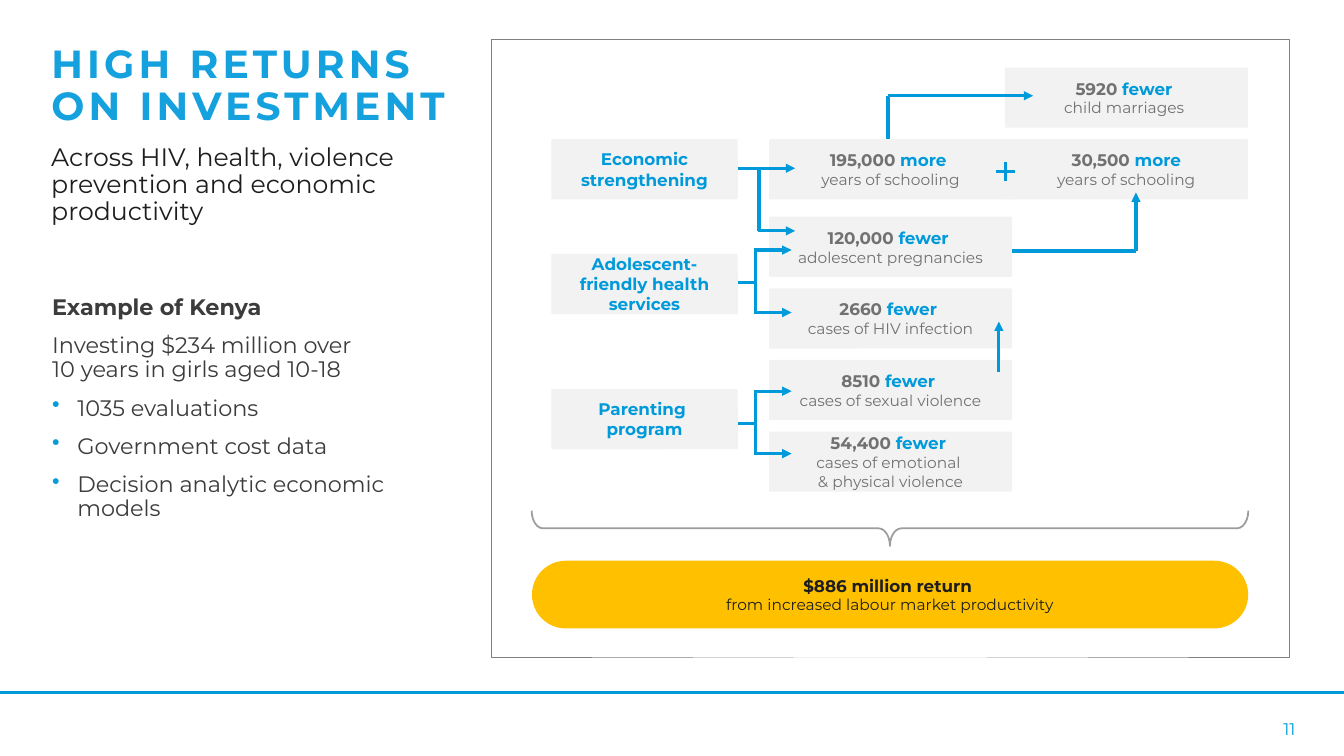
"""Build the slide on the returns of investing in girls in Kenya."""
from dataclasses import dataclass

from lxml.etree import SubElement
from pptx import Presentation
from pptx.dml.color import RGBColor
from pptx.enum.shapes import MSO_CONNECTOR as Connector, MSO_SHAPE as Preset
from pptx.enum.text import MSO_ANCHOR as Anchor, MSO_AUTO_SIZE as AutoSize, PP_ALIGN as Align
from pptx.oxml.ns import qn
from pptx.util import Pt

FONT = "Montserrat"
COLOURS = {
    "accent": "009ADA", "title": "14A1DD", "bullet": "059CD9", "ink": "1E1E1E",
    "body": "3C3C3C", "muted": "717171", "panel": "F2F2F2", "gold": "FFC000",
    "frame": "808080", "brace": "9D9D9D",
}
OUTCOME_LEFT, OUTCOME_RIGHT_LEFT, OUTCOME_WIDTH = 549.4, 717.8, 173.5
DRIVER_LEFT, DRIVER_WIDTH, BOX_HEIGHT = 393.8, 133.2, 43
ROW_TOP, PREGNANCY_TOP, ROW_PITCH = 99.4, 154.8, 51.15


@dataclass(frozen=True)
class Outcome:
    """A measured result with its figure, direction and caption."""
    left: float
    top: float
    figure: str
    change: str
    caption: str


@dataclass(frozen=True)
class Driver:
    """An intervention with the arrows that fan out to its outcomes."""
    label: str
    top: float
    stem_y: float
    trunk_x: float
    tip_x: float
    arrow_ys: tuple[float, float]


@dataclass(frozen=True)
class Route:
    """A chain of straight segments, with an optional head on the last."""
    points: tuple[tuple[float, float], ...]
    head: bool = True


OUTCOMES = [
    Outcome(OUTCOME_RIGHT_LEFT, ROW_TOP - ROW_PITCH, "5920 ", "fewer ", "child marriages "),
    Outcome(OUTCOME_LEFT, ROW_TOP, "195,000", " more ", "years of schooling"),
    Outcome(OUTCOME_RIGHT_LEFT, ROW_TOP, "30,500", " more", "years of schooling"),
] + [
    Outcome(OUTCOME_LEFT, PREGNANCY_TOP + row * ROW_PITCH, figure, "fewer ", caption)
    for row, (figure, caption) in enumerate([
        ("120,000 ", "adolescent pregnancies"),
        ("2660 ", "cases of HIV infection"),
        ("8510 ", "cases of sexual violence"),
        ("54,400 ", "cases of emotional \n& physical violence"),
    ])
]
DRIVERS = [
    Driver("Economic strengthening", ROW_TOP, 120.2, 542.2, 568, (120.2, 164.9)),
    Driver("Adolescent-friendly health services", 181.4, 201.6, 539.7, 565.4, (178.6, 223.2)),
    Driver("Parenting \nprogram", 277.9, 302.4, 539.7, 565.4, (279.4, 324)),
]
ROUTES = [
    Route(((634.3, ROW_TOP), (634.3, 68.4), (738, 68.4))),
    Route(((722.9, 179.3), (811.4, 179.3), (811.4, 137.5))),
    Route(((713.5, 265.7), (713.5, 229.7))),
    Route(((711.2, 122.6), (725.2, 122.6)), head=False),
    Route(((718.2, 115.6), (718.2, 129.6)), head=False),
]


def rgb(name: str) -> RGBColor:
    """Return the named colour."""
    return RGBColor.from_string(COLOURS[name])


def write(frame, text: str, *, size: float, colour: str, bold: bool = False,
          align=Align.LEFT, before: float = 0, spacing: float = 1, tracking: float = 0,
          bullet: bool = False, same_line: bool = False) -> None:
    """Write text as a new paragraph, or add it to the last one."""
    paragraph = frame.paragraphs[-1]
    if paragraph.runs and not same_line:
        paragraph = frame.add_paragraph()
    if bullet:
        properties = paragraph._p.get_or_add_pPr()
        properties.set("marL", str(Pt(18)))
        properties.set("indent", str(-Pt(18)))
        tint = SubElement(properties, qn("a:buClr"))
        SubElement(tint, qn("a:srgbClr")).set("val", COLOURS["bullet"])
        SubElement(properties, qn("a:buChar")).set("char", "•")
    paragraph.alignment = align
    paragraph.space_before = Pt(before)
    paragraph.line_spacing = spacing
    for index, line in enumerate(text.split("\n")):
        if index:
            paragraph.add_line_break()
        run = paragraph.add_run()
        run.text = line
        run.font.name, run.font.size, run.font.bold = FONT, Pt(size), bold
        run.font.color.rgb = rgb(colour)
        if tracking:
            run._r.get_or_add_rPr().set("spc", str(int(tracking * 100)))


def add_text_area(slide, left: float, top: float, width: float, height: float):
    """Add a wrapping text box and return its text frame."""
    frame = slide.shapes.add_textbox(Pt(left), Pt(top), Pt(width), Pt(height)).text_frame
    frame.word_wrap = True
    return frame


def add_panel(slide, preset, left: float, top: float, width: float, height: float, *,
              fill: str = "", line: str = "", weight: float = 0, adjust: tuple = ()):
    """Add a flat preset shape and return it."""
    panel = slide.shapes.add_shape(preset, Pt(left), Pt(top), Pt(width), Pt(height))
    panel.shadow.inherit = False
    for index, value in enumerate(adjust):
        panel.adjustments[index] = value
    if fill:
        panel.fill.solid()
        panel.fill.fore_color.rgb = rgb(fill)
    else:
        panel.fill.background()
    if line:
        panel.line.color.rgb = rgb(line)
        panel.line.width = Pt(weight)
    else:
        panel.line.fill.background()
    panel.text_frame.word_wrap = True
    panel.text_frame.vertical_anchor = Anchor.MIDDLE
    return panel


def add_route(slide, route: Route, weight: float = 2.25) -> None:
    """Draw each segment of a route."""
    for start, end in zip(route.points, route.points[1:]):
        segment = slide.shapes.add_connector(Connector.STRAIGHT, *map(Pt, start + end))
        segment.line.color.rgb = rgb("accent")
        segment.line.width = Pt(weight)
        if route.head and end == route.points[-1]:
            SubElement(segment.line._get_or_add_ln(), qn("a:tailEnd")).set("type", "triangle")
        SubElement(segment._element.spPr, qn("a:effectLst"))


def add_outcome(slide, outcome: Outcome) -> None:
    """Draw an outcome box."""
    frame = add_panel(slide, Preset.ROUNDED_RECTANGLE, outcome.left, outcome.top, OUTCOME_WIDTH,
                      BOX_HEIGHT, fill="panel", adjust=(0.02,)).text_frame
    write(frame, outcome.figure, size=12, colour="muted", bold=True, align=Align.CENTER)
    write(frame, outcome.change, size=12, colour="accent", bold=True, align=Align.CENTER,
          same_line=True)
    write(frame, outcome.caption, size=11, colour="muted", align=Align.CENTER)


def add_driver(slide, driver: Driver) -> None:
    """Draw an intervention box and its branching arrows."""
    box = add_panel(slide, Preset.ROUNDED_RECTANGLE, DRIVER_LEFT, driver.top, DRIVER_WIDTH,
                    BOX_HEIGHT, fill="panel", adjust=(0.02,))
    write(box.text_frame, driver.label, size=12, colour="accent", bold=True, align=Align.CENTER)
    trunk = driver.trunk_x
    stem = ((DRIVER_LEFT + DRIVER_WIDTH, driver.stem_y), (trunk, driver.stem_y))
    add_route(slide, Route(stem, head=False))
    add_route(slide, Route(tuple((trunk, y) for y in driver.arrow_ys), head=False))
    for y in driver.arrow_ys:
        add_route(slide, Route(((trunk - 1, y), (driver.tip_x, y))))


def add_story(slide) -> None:
    """Write the heading and the text on the left."""
    heading = slide.shapes.title
    heading.left, heading.top, heading.width, heading.height = map(Pt, (29.5, 28.1, 311, 70))
    frame = heading.text_frame
    frame.word_wrap, frame.auto_size, frame.vertical_anchor = True, AutoSize.NONE, Anchor.TOP
    write(frame, "HIGH RETURNS ON INVESTMENT", size=28, colour="title", bold=True,
          spacing=0.9, tracking=3)
    write(add_text_area(slide, 29.5, 99.5, 311, 68),
          "Across HIV, health, violence prevention and economic productivity",
          size=18, colour="ink", spacing=0.9)
    example = add_text_area(slide, 30.2, 208.1, 291.6, 170)
    write(example, "Example of Kenya", size=16, colour="body", bold=True, spacing=0.9)
    write(example, "Investing $234 million over \n10 years in girls aged 10-18",
          size=16, colour="body", before=10, spacing=0.9)
    for basis in ("1035 evaluations", "Government cost data", "Decision analytic economic models"):
        write(example, basis, size=16, colour="body", before=10, spacing=0.9, bullet=True)


def main() -> None:
    """Build and save the slide."""
    deck = Presentation()
    deck.slide_width, deck.slide_height = Pt(960), Pt(540)
    slide = deck.slides.add_slide(deck.slide_layouts[5])
    add_route(slide, Route(((0, 494.6), (960, 494.6)), head=False), weight=2)
    add_story(slide)
    add_panel(slide, Preset.RECTANGLE, 351.2, 28.2, 569.7, 441, line="frame", weight=0.25)
    for outcome in OUTCOMES:
        add_outcome(slide, outcome)
    for driver in DRIVERS:
        add_driver(slide, driver)
    for route in ROUTES:
        add_route(slide, route)
    brace = add_panel(slide, Preset.LEFT_BRACE, 623.1, 121.4, 25.2, 511.9, line="brace",
                      weight=1.25, adjust=(0.32, 0.5))
    brace.rotation = 270
    total = add_panel(slide, Preset.ROUNDED_RECTANGLE, 380, 400.5, 511.6, 48.4, fill="gold",
                      adjust=(0.5,)).text_frame
    write(total, "$886 million return ", size=12, colour="ink", bold=True, align=Align.CENTER)
    write(total, "from increased labour market productivity", size=11, colour="ink",
          align=Align.CENTER)
    write(add_text_area(slide, 889.9, 509.8, 42.5, 28.8), "11", size=12, colour="accent",
          align=Align.RIGHT)
    deck.save("out.pptx")


if __name__ == "__main__":
    main()
